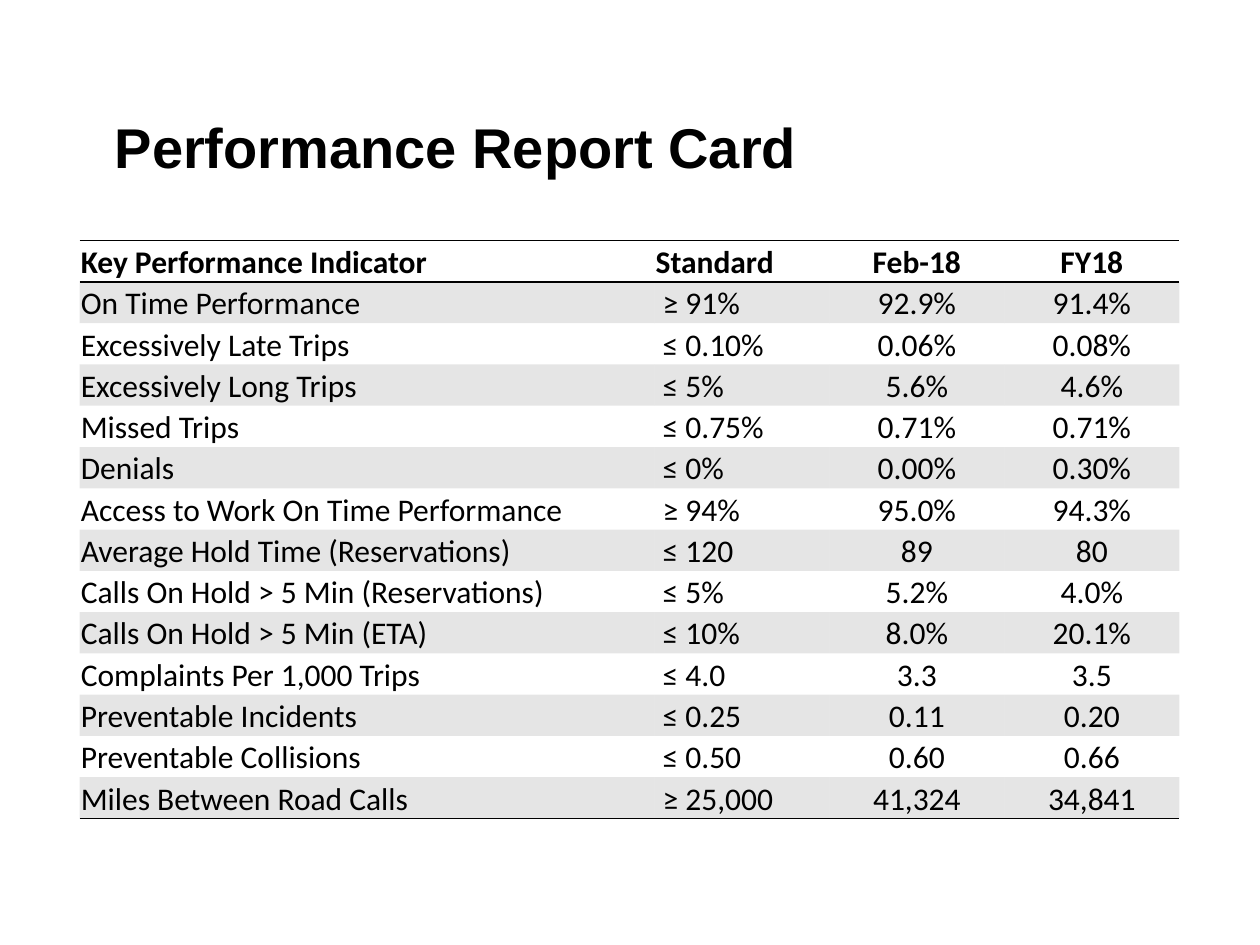
from typing import NamedTuple

from lxml import etree
from pptx import Presentation
from pptx.dml.color import RGBColor
from pptx.enum.text import MSO_ANCHOR, PP_ALIGN
from pptx.oxml.ns import qn
from pptx.util import Pt

LEFT, MID = PP_ALIGN.LEFT, PP_ALIGN.CENTER
BASE, CENTRE = MSO_ANCHOR.BOTTOM, MSO_ANCHOR.MIDDLE
BLACK, GREY = "000000", "808080"
PLAIN_STYLE = "{2D5ABB26-0587-4C30-8999-92F81FD0307C}"
WIDTHS = (328.5, 100, 100, 100)
ALIGNS = (LEFT, LEFT, MID, MID)
ROW = 23.6
INSET, SHIFT = 0.7, 4


class Metric(NamedTuple):
    name: str
    goal: str
    month: str
    year: str


METRICS = [
    Metric("Key Performance Indicator", "Standard", "Feb-18", "FY18"),
    Metric("On Time Performance", "≥ 91%", "92.9%", "91.4%"),
    Metric("Excessively Late Trips", "≤ 0.10%", "0.06%", "0.08%"),
    Metric("Excessively Long Trips", "≤ 5%", "5.6%", "4.6%"),
    Metric("Missed Trips", "≤ 0.75%", "0.71%", "0.71%"),
    Metric("Denials", "≤ 0%", "0.00%", "0.30%"),
    Metric("Access to Work On Time Performance", "≥ 94%", "95.0%", "94.3%"),
    Metric("Average Hold Time (Reservations)", "≤ 120", "89", "80"),
    Metric("Calls On Hold > 5 Min (Reservations)", "≤ 5%", "5.2%", "4.0%"),
    Metric("Calls On Hold > 5 Min (ETA)", "≤ 10%", "8.0%", "20.1%"),
    Metric("Complaints Per 1,000 Trips", "≤ 4.0", "3.3", "3.5"),
    Metric("Preventable Incidents", "≤ 0.25", "0.11", "0.20"),
    Metric("Preventable Collisions", "≤ 0.50", "0.60", "0.66"),
    Metric("Miles Between Road Calls", "≥ 25,000", "41,324", "34,841"),
]


def colour(code: str) -> RGBColor:
    return RGBColor.from_string(code)


def style(par, face: str, size: float, bold: bool) -> None:
    font = par.font
    font.name, font.size, font.bold = face, Pt(size), bold
    font.color.rgb = colour(BLACK)


def shade(cell) -> None:
    """Fill a cell with grey at 20% opacity."""
    cell.fill.solid()
    cell.fill.fore_color.rgb = colour(GREY)
    tint = cell._tc.tcPr.find(".//" + qn("a:srgbClr"))
    etree.SubElement(tint, qn("a:alpha"), val="20000")


def rule(cell, tags: list[str]) -> None:
    """Draw black borders; they must come before the fill in the XML."""
    for spot, tag in enumerate(tags):
        line = etree.Element(qn(tag), w=str(Pt(1)))
        fill = etree.SubElement(line, qn("a:solidFill"))
        etree.SubElement(fill, qn("a:srgbClr"), val=BLACK)
        cell._tc.get_or_add_tcPr().insert(spot, line)


def add_title(slide, text: str) -> None:
    frame = slide.shapes.add_textbox(Pt(58.5), Pt(60.5), Pt(604), Pt(46)).text_frame
    frame.word_wrap = True
    frame.vertical_anchor = CENTRE
    par = frame.paragraphs[0]
    par.text = text
    style(par, "Arial", 32, True)


def add_cell(cell, text: str, row: int, col: int) -> None:
    head, last = row == 0, row == len(METRICS) - 1
    cell.vertical_anchor = BASE
    cell.margin_left = Pt(INSET + (SHIFT if col == 1 and not head else 0))
    cell.margin_top = cell.margin_right = Pt(INSET)
    cell.margin_bottom = 0
    par = cell.text_frame.paragraphs[0]
    par.text, par.alignment = text, ALIGNS[col]
    style(par, "Calibri", 18, head)
    if row % 2:
        shade(cell)
    else:
        cell.fill.background()
    if head:
        rule(cell, ["a:lnT", "a:lnB"])
    elif last:
        rule(cell, ["a:lnB"])


def add_card(slide, metrics: list[Metric]) -> None:
    table = slide.shapes.add_table(
        len(metrics), len(WIDTHS), Pt(45.5), Pt(137.5),
        Pt(sum(WIDTHS)), Pt(ROW * len(metrics))).table
    table.horz_banding = False
    table._tbl.tblPr.find(qn("a:tableStyleId")).text = PLAIN_STYLE
    for col, width in zip(table.columns, WIDTHS):
        col.width = Pt(width)
    for row, metric in enumerate(metrics):
        table.rows[row].height = Pt(ROW)
        for col, text in enumerate(metric):
            add_cell(table.cell(row, col), text, row, col)


def main() -> None:
    deck = Presentation()
    deck.slide_width, deck.slide_height = Pt(720), Pt(540)
    slide = deck.slides.add_slide(deck.slide_layouts[6])
    add_title(slide, "Performance Report Card")
    add_card(slide, METRICS)
    deck.save("out.pptx")


if __name__ == "__main__":
    main()
